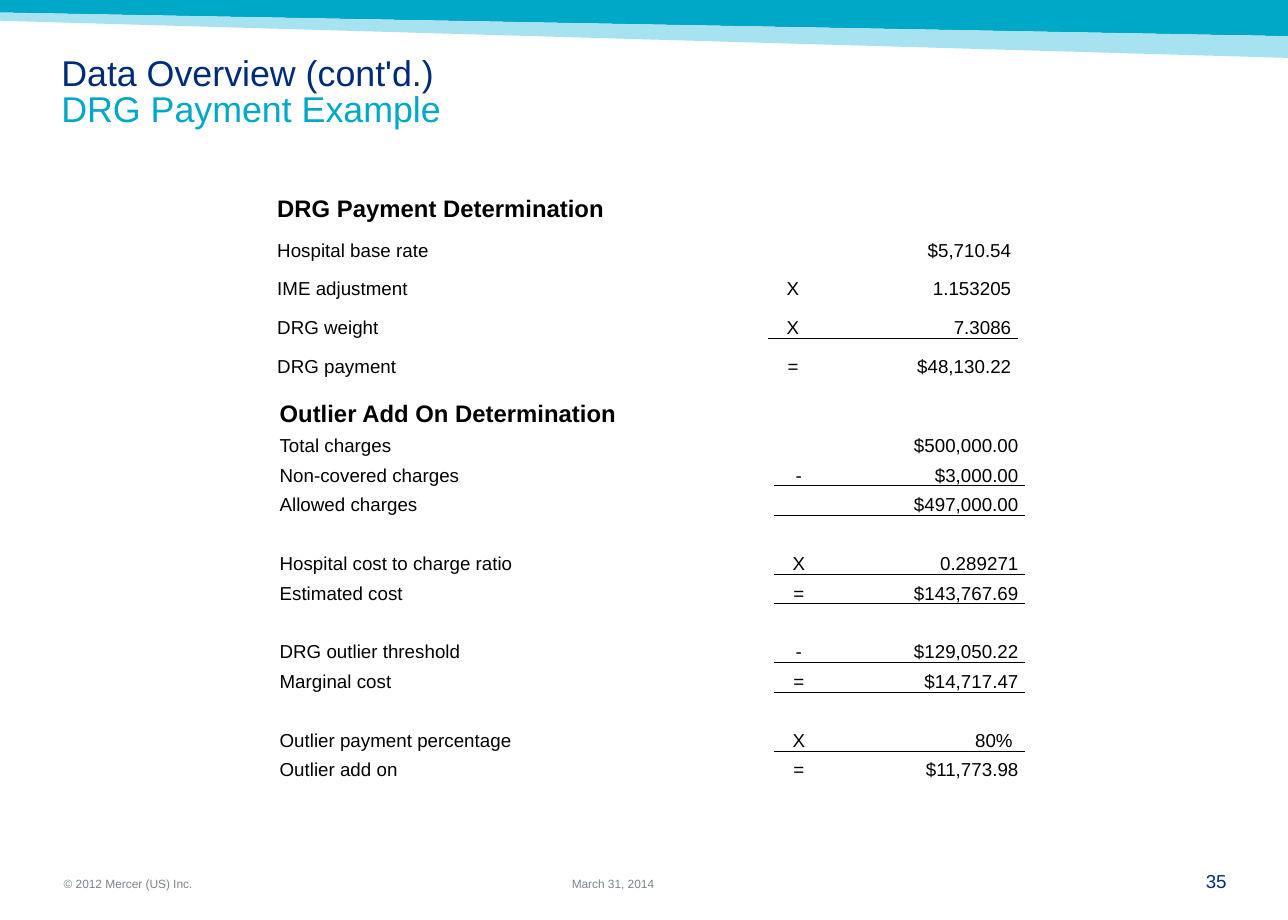
"""Build the DRG payment example slide with its two calculation tables."""
import dataclasses

import lxml.etree
import pptx
import pptx.dml.color
import pptx.enum.text
import pptx.oxml.ns
import pptx.util

Cm = pptx.util.Cm
Pt = pptx.util.Pt
qn = pptx.oxml.ns.qn
Align = pptx.enum.text.PP_ALIGN
Anchor = pptx.enum.text.MSO_ANCHOR


@dataclasses.dataclass(frozen=True)
class Theme:
    font: str = "Arial"
    navy: str = "002C77"
    teal: str = "00A8C8"
    pale: str = "A6E2EF"
    grey: str = "7C848A"
    black: str = "000000"
    title: float = 21
    heading: float = 14
    body: float = 11
    footer: float = 7
    rule: float = 0.5


theme = Theme()


def style_runs(paragraph, size, color, bold=False):
    for run in paragraph.runs:
        run.font.name = theme.font
        run.font.size = Pt(size)
        run.font.bold = bold
        run.font.color.rgb = pptx.dml.color.RGBColor.from_string(color)


def add_rule(cell, edge):
    line = lxml.etree.Element(qn(edge), w=str(Pt(theme.rule)))
    fill = lxml.etree.SubElement(line, qn("a:solidFill"))
    lxml.etree.SubElement(fill, qn("a:srgbClr"), val=theme.black)
    cell._tc.get_or_add_tcPr().insert(0, line)


presentation = pptx.Presentation()
presentation.slide_width = Cm(26.67)
presentation.slide_height = Cm(19.05)
slide = presentation.slides.add_slide(presentation.slide_layouts[6])

bands = [
    (theme.teal, [(0, 0), (26.67, 0), (26.67, 0.75), (0, 0.26)]),
    (theme.pale, [(0, 0.26), (26.67, 0.75), (26.67, 1.2), (0, 0.43)]),
]
for color, corners in bands:
    points = [(Cm(x), Cm(y)) for x, y in corners]
    builder = slide.shapes.build_freeform(*points[0])
    builder.add_line_segments(points[1:], close=True)
    band = builder.convert_to_shape()
    band.shadow.inherit = False
    band.fill.solid()
    band.fill.fore_color.rgb = pptx.dml.color.RGBColor.from_string(color)
    band.line.fill.background()

texts = [
    ("Data Overview (cont'd.)\nDRG Payment Example", (1.27, 1.07, 24.13, 1.93),
     theme.title, theme.navy, Align.LEFT, Anchor.TOP),
    ("© 2012 Mercer (US) Inc.", (1.32, 18.16, 8.05, 0.28),
     theme.footer, theme.grey, Align.LEFT, Anchor.BOTTOM),
    ("March 31, 2014", (11.84, 18.14, 3, 0.3),
     theme.footer, theme.grey, Align.LEFT, Anchor.BOTTOM),
    ("35", (24.16, 18.01, 1.24, 0.46),
     theme.body, theme.navy, Align.RIGHT, Anchor.TOP),
]
for text, place, size, color, alignment, anchor in texts:
    box = slide.shapes.add_textbox(*map(Cm, place))
    frame = box.text_frame
    frame.word_wrap = True
    frame.vertical_anchor = anchor
    frame.margin_left = frame.margin_right = 0
    frame.margin_top = frame.margin_bottom = Cm(0.13) if size == theme.title else 0
    paragraph = frame.paragraphs[0]
    paragraph.text = text
    paragraph.alignment = alignment
    style_runs(paragraph, size, color)
    if size == theme.title:
        paragraph.line_spacing = 0.83
        subtitle = paragraph.runs[1]
        subtitle.font.color.rgb = pptx.dml.color.RGBColor.from_string(theme.teal)

payment_rows = [
    ("DRG Payment Determination", "", ""),
    ("Hospital base rate", "", "$5,710.54"),
    ("IME adjustment", "X", "1.153205"),
    ("DRG weight", "X", "7.3086"),
    ("DRG payment", "=", "$48,130.22"),
]
outlier_rows = [
    ("Outlier Add On Determination", "", ""),
    ("Total charges", "", "$500,000.00"),
    ("Non-covered charges", "-", "$3,000.00"),
    ("Allowed charges", "", "$497,000.00"),
    ("", "", ""),
    ("Hospital cost to charge ratio", "X", "0.289271"),
    ("Estimated cost", "=", "$143,767.69"),
    ("", "", ""),
    ("DRG outlier threshold", "-", "$129,050.22"),
    ("Marginal cost", "=", "$14,717.47"),
    ("", "", ""),
    ("Outlier payment percentage", "X", "80%"),
    ("Outlier add on", "=", "$11,773.98"),
]
tables = [
    (payment_rows, (5.72, 3.63), (10.19, 1.02, 4.14), 0.97, 0.8, [3]),
    (outlier_rows, (5.77, 8.1), (10.26, 1.02, 4.17), 0.74, 0.61, [2, 5, 8, 11]),
]
alignments = [Align.LEFT, Align.CENTER, Align.RIGHT]
for rows, (left, top), widths, heading_height, row_height, ruled_rows in tables:
    height = heading_height + row_height * (len(rows) - 1)
    frame = slide.shapes.add_table(
        len(rows), len(widths), Cm(left), Cm(top), Cm(sum(widths)), Cm(height))
    table = frame.table
    table.first_row = table.horz_banding = False
    style = table._tbl.tblPr.find(qn("a:tableStyleId"))
    style.text = "{2D5ABB26-0587-4C30-8999-92F81FD0307C}"
    for column, width in zip(table.columns, widths):
        column.width = Cm(width)
    for row_index, values in enumerate(rows):
        is_heading = row_index == 0
        size = theme.heading if is_heading else theme.body
        table.rows[row_index].height = Cm(heading_height if is_heading else row_height)
        for column_index, value in enumerate(values):
            cell = table.cell(row_index, column_index)
            cell.fill.background()
            cell.vertical_anchor = Anchor.BOTTOM
            cell.margin_left = cell.margin_top = cell.margin_right = Cm(0.02)
            cell.margin_bottom = 0
            if column_index == 2:
                cell.margin_right = Cm(0.25 if value.endswith("%") else 0.13)
            paragraph = cell.text_frame.paragraphs[0]
            paragraph.text = value
            paragraph.alignment = alignments[column_index]
            paragraph.line_spacing = 0.86
            style_runs(paragraph, size, theme.black, bold=is_heading)
            lxml.etree.SubElement(paragraph._p, qn("a:endParaRPr"), sz=str(size * 100))
    for row_index in ruled_rows:
        for column_index in (1, 2):
            add_rule(table.cell(row_index, column_index), "a:lnB")
            add_rule(table.cell(row_index + 1, column_index), "a:lnT")

presentation.save("out.pptx")
